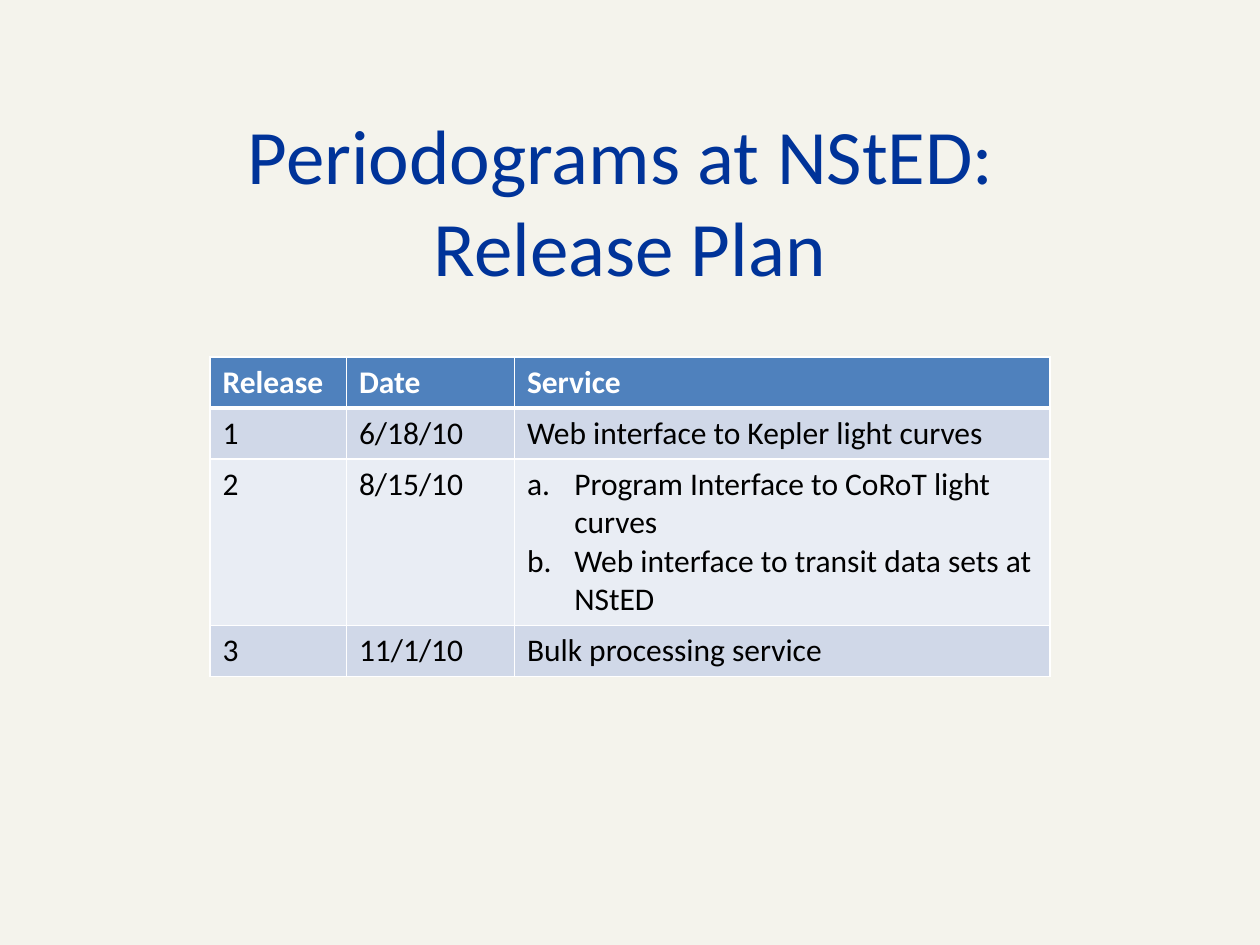
from lxml import etree
from pptx import Presentation
from pptx import util as u
from pptx.dml.color import RGBColor
from pptx.enum import text
from pptx.oxml import ns

TITLE = "Periodograms at NStED: \vRelease Plan"
ROWS = [
    ("Release", "Date", "Service"),
    ("1", "6/18/10", "Web interface to Kepler light curves"),
    ("2", "8/15/10", ["Program Interface to CoRoT light curves",
                      "Web interface to transit data sets at NStED"]),
    ("3", "11/1/10", "Bulk processing service"),
]
COLUMN_WIDTHS = [78, 96, 306]
ROW_HEIGHTS = [29, 29, 95, 29]
HEADER_FILL = "4F81BD"
BAND_FILLS = ["E9EDF4", "D0D8E8"]
FONT = "Calibri"


def color(value):
    return RGBColor.from_string(value)


def format_font(font, size, ink, bold=False):
    font.name = FONT
    font.size = u.Pt(size)
    font.bold = bold
    font.color.rgb = color(ink)


def write(frame, content, size=18, ink="000000", bold=False):
    numbered = isinstance(content, list)
    for index, line in enumerate(content if numbered else [content]):
        para = frame.add_paragraph() if index else frame.paragraphs[0]
        para.text = line
        if numbered:
            properties = para._p.get_or_add_pPr()
            properties.set("marL", str(u.Pt(27)))
            properties.set("indent", str(u.Pt(-27)))
            etree.SubElement(properties, ns.qn("a:buFont"), typeface="+mj-lt")
            etree.SubElement(properties, ns.qn("a:buAutoNum"), type="alphaLcPeriod")
        for span in para.runs:
            format_font(span.font, size, ink, bold)


def add_borders(cell, widths, ink="FFFFFF"):
    properties = cell._tc.get_or_add_tcPr()
    for side, width in widths.items():
        line = etree.SubElement(properties, ns.qn("a:ln" + side), w=str(u.Pt(width)))
        fill = etree.SubElement(line, ns.qn("a:solidFill"))
        etree.SubElement(fill, ns.qn("a:srgbClr"), val=ink)


def add_title(page):
    box = page.shapes.title
    box.left, box.top, box.width, box.height = map(u.Pt, (36, 84, 648, 60))
    frame = box.text_frame
    frame.word_wrap = True
    frame.auto_size = text.MSO_AUTO_SIZE.NONE
    frame.vertical_anchor = text.MSO_ANCHOR.MIDDLE
    write(frame, TITLE, size=44, ink="003399")
    frame.paragraphs[0].alignment = text.PP_ALIGN.CENTER


def add_release_table(page):
    table = page.shapes.add_table(
        len(ROWS), len(COLUMN_WIDTHS), u.Pt(120), u.Pt(204),
        u.Pt(sum(COLUMN_WIDTHS)), u.Pt(sum(ROW_HEIGHTS))).table
    for column, width in zip(table.columns, COLUMN_WIDTHS):
        column.width = u.Pt(width)
    for index, (row, height, contents) in enumerate(zip(table.rows, ROW_HEIGHTS, ROWS)):
        row.height = u.Pt(height)
        header = index == 0
        for cell, content in zip(row.cells, contents):
            write(cell.text_frame, content, ink="FFFFFF" if header else "000000", bold=header)
            add_borders(cell, {"L": 1, "R": 1, "T": 3 if index == 1 else 1,
                               "B": 3 if header else 1})
            cell.fill.solid()
            cell.fill.fore_color.rgb = color(HEADER_FILL if header else BAND_FILLS[index % 2])


def main():
    deck = Presentation()
    deck.slide_width, deck.slide_height = u.Pt(720), u.Pt(540)
    page = deck.slides.add_slide(deck.slide_layouts.get_by_name("Title Only"))
    page.background.fill.solid()
    page.background.fill.fore_color.rgb = color("F4F3EC")
    add_title(page)
    add_release_table(page)
    deck.save("out.pptx")


if __name__ == "__main__":
    main()
